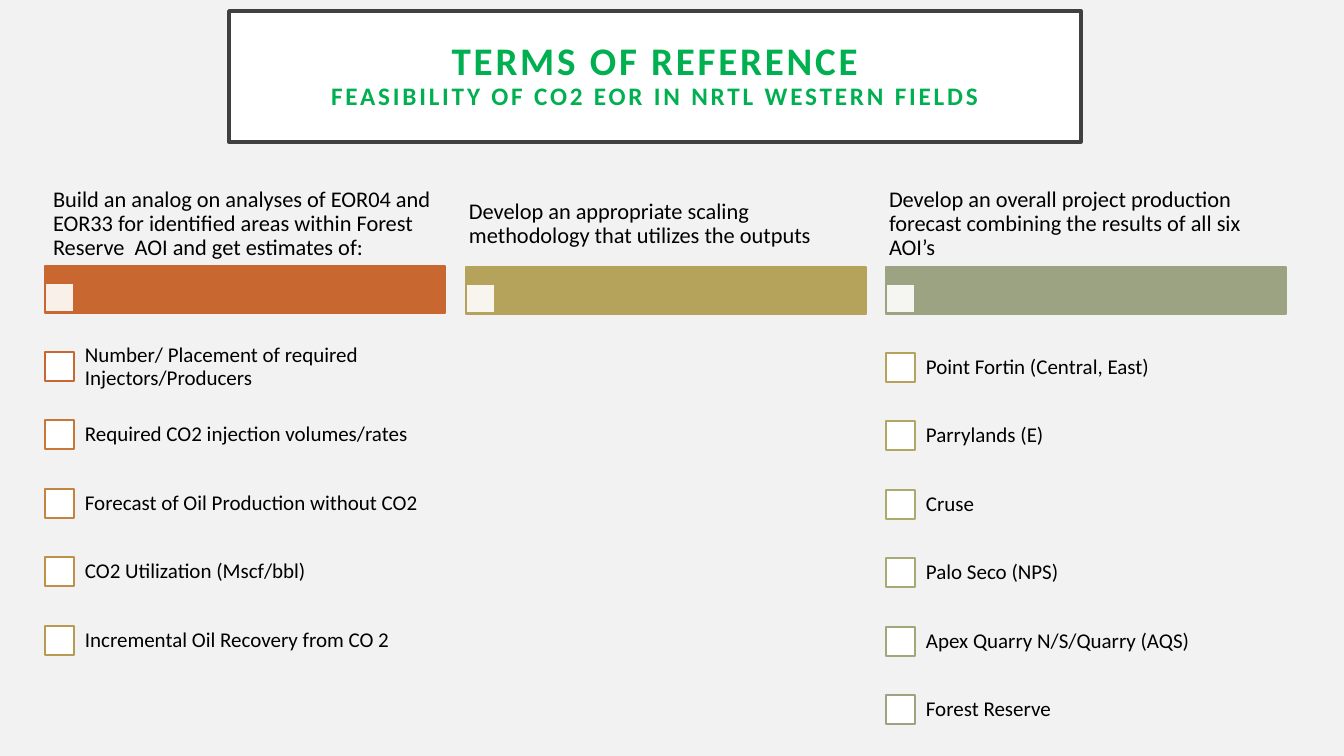
from lxml.etree import SubElement
from pptx import Presentation
from pptx.dml.color import RGBColor
from pptx.enum.shapes import MSO_SHAPE
from pptx.enum.text import MSO_ANCHOR, MSO_AUTO_SIZE, PP_ALIGN
from pptx.oxml.ns import qn
from pptx.util import Emu, Pt

PAGE_WIDTH, PAGE_HEIGHT = 1344, 756
SCALE = 12192000 / PAGE_WIDTH
FONT = "Calibri"
BAR_HEIGHT, CHECK_SIZE = 47, 29

COLUMNS = [
    {
        "box": (45, 182, 400), "heading_height": 84, "heading_indent": 5, "color": "C96731",
        "heading": "Build an analog on analyses of EOR04 and EOR33 for identified areas "
                   "within Forest Reserve  AOI and get estimates of:",
        "items": [
            ("Number/ Placement of required Injectors/Producers", "C96731"),
            ("Required CO2 injection volumes/rates", "C77738"),
            ("Forecast of Oil Production without CO2", "C28541"),
            ("CO2 Utilization (Mscf/bbl)", "BE914A"),
            ("Incremental Oil Recovery from CO 2", "B99A52"),
        ],
    },
    {
        "box": (466, 182, 400), "heading_height": 85, "heading_indent": 0, "color": "B5A25B",
        "heading": "Develop an appropriate scaling methodology that utilizes the outputs",
        "items": [],
    },
    {
        "box": (886, 182, 400), "heading_height": 85, "heading_indent": 0, "color": "9CA383",
        "heading": "Develop an overall project production forecast combining the results "
                   "of all six  AOI’s",
        "items": [
            ("Point Fortin (Central, East)", "B5A25B"),
            ("Parrylands (E)", "B1A763"),
            ("Cruse", "ADAB6C"),
            ("Palo Seco (NPS)", "A7AA74"),
            ("Apex Quarry N/S/Quarry (AQS)", "A1A67B"),
            ("Forest Reserve", "9CA383"),
        ],
    },
]


def px(length):
    """Turn pixels into EMU."""
    return Emu(round(length * SCALE))


def rgb(code):
    """Turn a hex string into a colour."""
    return RGBColor.from_string(code)


def set_frame(frame, inset_x, inset_y):
    """Wrap and centre a text frame vertically with the given insets."""
    frame.word_wrap = True
    frame.auto_size = MSO_AUTO_SIZE.NONE
    frame.vertical_anchor = MSO_ANCHOR.MIDDLE
    frame.margin_left = frame.margin_right = px(inset_x)
    frame.margin_top = frame.margin_bottom = px(inset_y)


def style_paragraph(para, size, color, bold=False):
    """Set the font and line spacing of a paragraph."""
    para.line_spacing = 0.9
    para.font.name = FONT
    para.font.size = Pt(size)
    para.font.bold = bold
    para.font.color.rgb = rgb(color)


def add_box(page, box, fill, line, opacity=100):
    """Add an outlined rectangle."""
    shape = page.shapes.add_shape(MSO_SHAPE.RECTANGLE, *map(px, box))
    shape.shadow.inherit = False
    shape.fill.solid()
    shape.fill.fore_color.rgb = rgb(fill)
    shape.line.color.rgb = rgb(line)
    shape.line.width = Pt(1)
    if opacity < 100:
        color = shape.fill._xPr.find(qn("a:solidFill"))[0]
        SubElement(color, qn("a:alpha"), val=str(opacity * 1000))


def add_text(page, box, text, size, inset_x, inset_y):
    """Add a one-paragraph text box."""
    frame = page.shapes.add_textbox(*map(px, box)).text_frame
    set_frame(frame, inset_x, inset_y)
    para = frame.paragraphs[0]
    para.text = text
    style_paragraph(para, size, "000000")


def add_title(page, box):
    """Place and format the framed title and its second line."""
    title = page.shapes.title
    title.left, title.top, title.width, title.height = map(px, box)
    title.fill.solid()
    title.fill.fore_color.rgb = rgb("FFFFFF")
    title.line.color.rgb = rgb("404040")
    title.line.width = Pt(2.5)
    frame = title.text_frame
    frame.text = "TERMS OF REFERENCE\nFEASIBILITY OF CO2 EOR IN NRTL WESTERN FIELDS"
    set_frame(frame, 20, 20)
    for para, size in zip(frame.paragraphs, (27.9, 18)):
        para.alignment = PP_ALIGN.CENTER
        para.space_before = Pt(0)
        style_paragraph(para, size, "00B050", bold=True)
        for span in para.runs:
            span.font._element.set("spc", "200")


def add_column(page, box, heading_height, heading_indent, color, heading, items):
    """Add a heading, its coloured bar and the checklist below."""
    left, top, width = box
    bar_top = top + heading_height
    add_box(page, (left, bar_top, width, BAR_HEIGHT), color, color)
    add_box(page, (left, bar_top + 17, CHECK_SIZE, CHECK_SIZE), "FFFFFF", color, opacity=90)
    heading_box = (left + heading_indent, top, width - 2 * heading_indent, heading_height)
    add_text(page, heading_box, heading, 16, 3, 2)
    for row, (label, outline) in enumerate(items):
        row_top = bar_top + 67 + row * 137 // 2
        add_box(page, (left, row_top + 19, CHECK_SIZE, CHECK_SIZE), "FFFFFF", outline)
        add_text(page, (left + 28, row_top, width - 28, 68), label, 15, 12, 12)


def main():
    """Build and save the deck."""
    deck = Presentation()
    deck.slide_width, deck.slide_height = px(PAGE_WIDTH), px(PAGE_HEIGHT)
    page = deck.slides.add_slide(deck.slide_layouts[5])
    page.background.fill.solid()
    page.background.fill.fore_color.rgb = rgb("F2F2F2")
    add_title(page, (229, 11, 852, 131))
    for column in COLUMNS:
        add_column(page, **column)
    deck.save("out.pptx")


if __name__ == "__main__":
    main()
